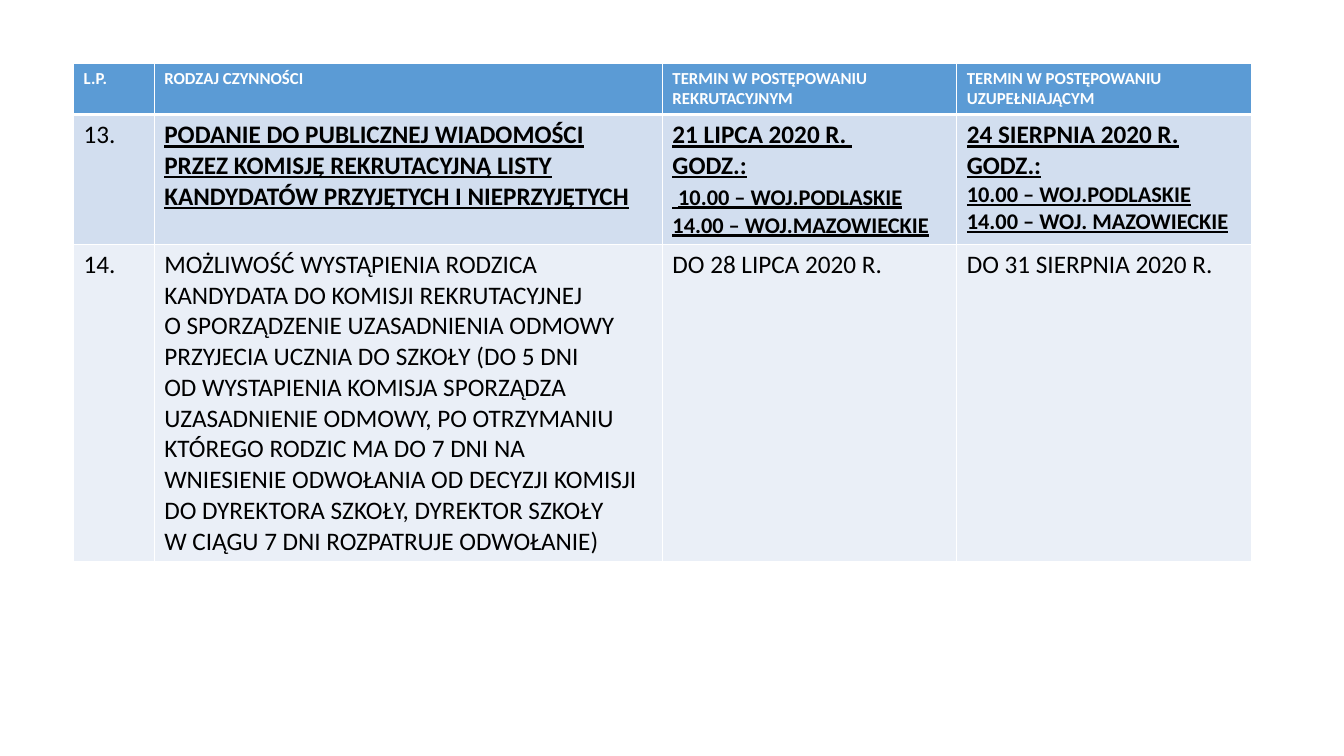
from dataclasses import dataclass

from lxml import etree
from pptx import Presentation
from pptx.dml.color import RGBColor
from pptx.oxml import ns
from pptx.util import Inches, Pt


@dataclass(frozen=True)
class Theme:
    font: str = "Calibri"
    white: str = "FFFFFF"
    black: str = "000000"
    header_fill: str = "5B9BD5"
    band_dark: str = "D2DEEF"
    band_light: str = "EAEFF7"
    header_size: int = 12
    body_size: int = 18
    hours_size: int = 16
    border: int = 1
    header_rule: int = 3


@dataclass(frozen=True)
class RowStyle:
    fill: str
    color: str
    size: int
    bottom: int = Theme.border


THEME = Theme()
HEADER = RowStyle(THEME.header_fill, THEME.white, THEME.header_size, THEME.header_rule)
DARK = RowStyle(THEME.band_dark, THEME.black, THEME.body_size)
LIGHT = RowStyle(THEME.band_light, THEME.black, THEME.body_size)

TABLE_BOX = (0.73, 0.63, 11.68, 4.87)
COLUMN_WIDTHS = (0.8, 5.04, 2.92, 2.92)
ROW_HEIGHTS = (0.5, 1.27, 3.1)


def hours(words):
    return words, THEME.hours_size


# A cell is a list of paragraphs, a paragraph a list of runs;
# a run is plain text or a (text, size) pair.
HEADER_CELLS = [[[title]] for title in (
    "L.P.", "RODZAJ CZYNNOŚCI",
    "TERMIN W POSTĘPOWANIU REKRUTACYJNYM",
    "TERMIN W POSTĘPOWANIU UZUPEŁNIAJĄCYM")]
RESULTS_CELLS = [
    [["13."]],
    [["PODANIE DO PUBLICZNEJ WIADOMOŚCI PRZEZ KOMISJĘ REKRUTACYJNĄ LISTY "
      "KANDYDATÓW PRZYJĘTYCH I NIEPRZYJĘTYCH"]],
    [["21 LIPCA 2020 R. \nGODZ.:"],
     [" ", hours("10.00 – WOJ.PODLASKIE")],
     [hours("14.00 – WOJ.MAZOWIECKIE")]],
    [["24 SIERPNIA 2020 R."],
     ["GODZ.:"],
     [hours("10.00 – WOJ.PODLASKIE")],
     [hours("14.00 – WOJ. MAZOWIECKIE")]],
]
APPEAL_CELLS = [
    [["14."]],
    [["MOŻLIWOŚĆ WYSTĄPIENIA RODZICA KANDYDATA DO KOMISJI REKRUTACYJNEJ \n"
      "O SPORZĄDZENIE UZASADNIENIA ODMOWY PRZYJECIA UCZNIA DO SZKOŁY (DO 5 DNI \n"
      "OD WYSTAPIENIA KOMISJA SPORZĄDZA UZASADNIENIE ODMOWY, PO OTRZYMANIU "
      "KTÓREGO RODZIC MA DO 7 DNI NA WNIESIENIE ODWOŁANIA OD DECYZJI KOMISJI "
      "DO DYREKTORA SZKOŁY, DYREKTOR SZKOŁY \n"
      "W CIĄGU 7 DNI ROZPATRUJE ODWOŁANIE)"]],
    [["DO 28 LIPCA 2020 R."]],
    [["DO 31 SIERPNIA 2020 R."]],
]
ROWS = [(HEADER, HEADER_CELLS), (DARK, RESULTS_CELLS), (LIGHT, APPEAL_CELLS)]


def add_run(p, words, size, color, bold, underline):
    """Add text to a paragraph, turning each newline into a line break."""
    for i, line in enumerate(words.split("\n")):
        if i:
            p.add_line_break()
        r = p.add_run()
        r.text = line
        r.font.name = THEME.font
        r.font.size = Pt(size)
        r.font.color.rgb = RGBColor.from_string(color)
        r.font.bold = bold
        r.font.underline = underline


def set_borders(cell, widths):
    """Draw white left, right, top and bottom borders, widths in points."""
    tc_pr = cell._tc.get_or_add_tcPr()
    for i, (side, width) in enumerate(zip(("lnL", "lnR", "lnT", "lnB"), widths)):
        ln = etree.Element(ns.qn(f"a:{side}"), w=str(Pt(width)))
        fill = etree.SubElement(ln, ns.qn("a:solidFill"))
        etree.SubElement(fill, ns.qn("a:srgbClr"), val=THEME.white)
        tc_pr.insert(i, ln)


def fill_cell(cell, paragraphs, style, bold, underline):
    cell.fill.solid()
    cell.fill.fore_color.rgb = RGBColor.from_string(style.fill)
    tf = cell.text_frame
    for i, runs in enumerate(paragraphs):
        p = tf.add_paragraph() if i else tf.paragraphs[0]
        for run in runs:
            words, size = (run, style.size) if isinstance(run, str) else run
            add_run(p, words, size, style.color, bold, underline)


def add_schedule(slide, box):
    table = slide.shapes.add_table(
        len(ROWS), len(COLUMN_WIDTHS), *map(Inches, box)).table
    for column, width in zip(table.columns, COLUMN_WIDTHS):
        column.width = Inches(width)
    top = THEME.border
    for row, height, (style, cells) in zip(table.rows, ROW_HEIGHTS, ROWS):
        row.height = Inches(height)
        for i, (cell, paragraphs) in enumerate(zip(row.cells, cells)):
            emphasis = style is DARK and i > 0
            fill_cell(cell, paragraphs, style, style is HEADER or emphasis, emphasis)
            set_borders(cell, (THEME.border, THEME.border, top, style.bottom))
        top = style.bottom


def main():
    prs = Presentation()
    prs.slide_width, prs.slide_height = Inches(13.33), Inches(7.5)
    s = prs.slides.add_slide(prs.slide_layouts[6])
    add_schedule(s, TABLE_BOX)
    prs.save("out.pptx")


if __name__ == "__main__":
    main()
